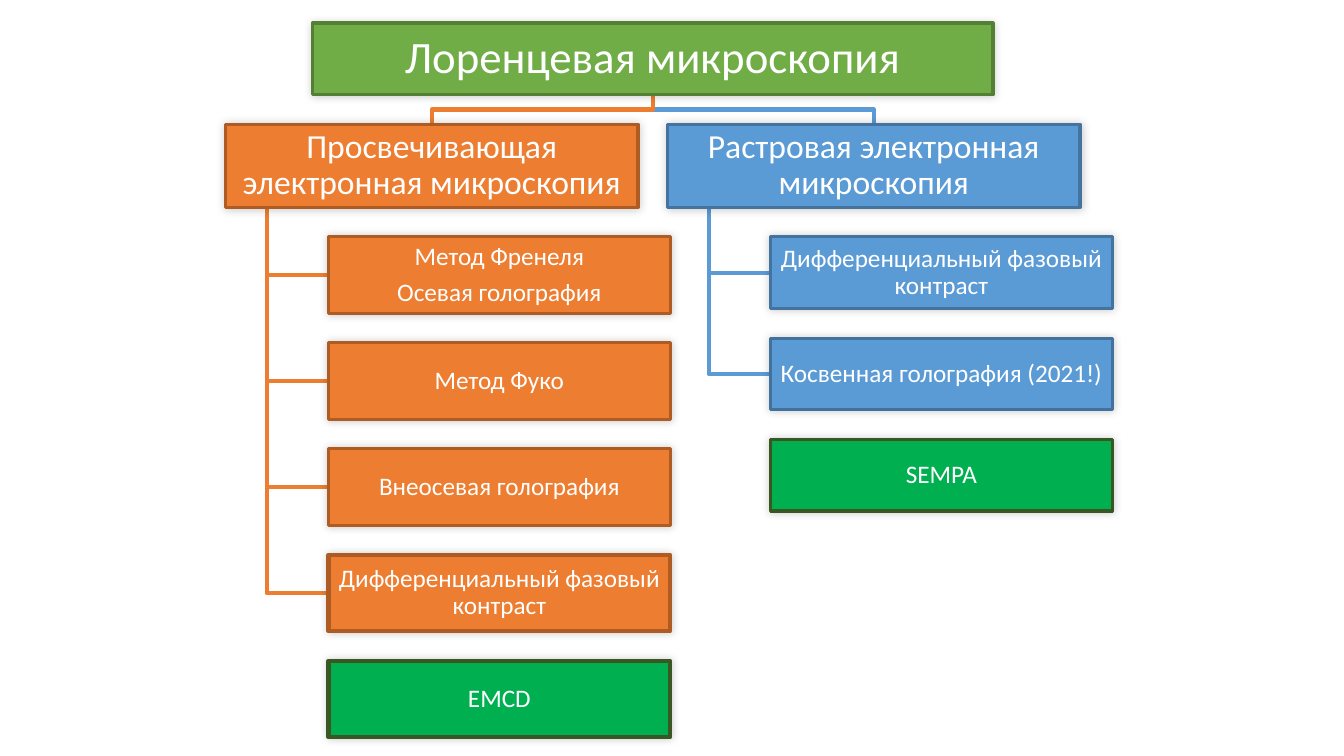
from lxml import etree
from pptx import Presentation, util as u
from pptx.dml.color import RGBColor
from pptx.enum import shapes, text
from pptx.oxml.ns import qn

COLORS = {
    "white": "FFFFFF", "black": "000000",
    "root": "70AD47", "root_edge": "538035",
    "orange": "ED7D31", "orange_edge": "AF5C24",
    "blue": "5B9BD5", "blue_edge": "43739E", "blue_dark_edge": "41719C",
    "green": "00B050", "green_edge": "385723",
}

ROOT = "Лоренцевая микроскопия"
# fields of a method: wording, fill, edge, edge width, joined to the trunk
BRANCHES = [
    {"name": "Просвечивающая электронная микроскопия", "color": "orange", "method_height": 1.93,
     "methods": [
         ("Метод Френеля\nОсевая голография", "orange", "orange_edge", 2.25, True),
         ("Метод Фуко", "orange", "orange_edge", 2.25, True),
         ("Внеосевая голография", "orange", "orange_edge", 2.25, True),
         ("Дифференциальный фазовый контраст", "orange", "orange_edge", 3, True),
         ("EMCD", "green", "green_edge", 3, False)]},
    {"name": "Растровая электронная микроскопия", "color": "blue", "method_height": 1.81,
     "methods": [
         ("Дифференциальный фазовый контраст", "blue", "blue_edge", 2.25, True),
         ("Косвенная голография (2021!)", "blue", "blue_dark_edge", 2.25, True),
         ("SEMPA", "green", "green_edge", 2.25, False)]},
]

GAP = 0.74
LEFT, TOP = 5.68, 0.58
ROOT_W, ROOT_H = 17.15, 1.81
BRANCH_W, BRANCH_H = 10.4, 2.1
METHOD_W = 8.61
METHOD_INDENT, TRUNK_INDENT = BRANCH_W / 4, BRANCH_W / 10

ROOT_X = LEFT + BRANCH_W + GAP / 2
ROOT_BOTTOM = TOP + ROOT_H
BRANCH_TOP = ROOT_BOTTOM + GAP
BRANCH_BOTTOM = BRANCH_TOP + BRANCH_H


def rgb(color):
    return RGBColor.from_string(COLORS[color])


def add_line(slide, points, color):
    corners = [(u.Cm(x), u.Cm(y)) for x, y in points]
    builder = slide.shapes.build_freeform(*corners[0])
    builder.add_line_segments(corners[1:], close=False)
    line = builder.convert_to_shape()
    line.fill.background()
    line.line.color.rgb = rgb(color)
    line.line.width = u.Pt(3)
    line.shadow.inherit = False


def add_glow(box):
    box.shadow.inherit = False
    effects = box.element.spPr.find(qn("a:effectLst"))
    shadow = etree.SubElement(effects, qn("a:outerShdw"), blurRad=str(u.Pt(6)), dist="0",
                              dir="18900000", algn="bl", rotWithShape="0")
    tone = etree.SubElement(shadow, qn("a:srgbClr"), val=COLORS["black"])
    etree.SubElement(tone, qn("a:alpha"), val="20000")


def format_box(box, wording, size, fill, edge, edge_width=2.25, inset=0.05):
    box.fill.solid()
    box.fill.fore_color.rgb = rgb(fill)
    box.line.color.rgb = rgb(edge)
    box.line.width = u.Pt(edge_width)
    add_glow(box)
    frame = box.text_frame
    frame.text = wording
    frame.word_wrap = True
    frame.auto_size = text.MSO_AUTO_SIZE.NONE
    frame.vertical_anchor = text.MSO_ANCHOR.MIDDLE
    frame.margin_left = frame.margin_right = u.Cm(inset)
    frame.margin_top = frame.margin_bottom = u.Cm(inset)
    for paragraph in frame.paragraphs:
        paragraph.alignment = text.PP_ALIGN.CENTER
        paragraph.line_spacing = 0.9
        paragraph.space_before = u.Pt(0)
        paragraph.space_after = u.Pt(0.35 * size)
        for run in paragraph.runs:
            run.font.name = "Calibri"
            run.font.size = u.Pt(size)
            run.font.color.rgb = rgb("white")


def add_box(slide, left, top, width, height):
    return slide.shapes.add_shape(shapes.MSO_SHAPE.RECTANGLE,
                                  u.Cm(left), u.Cm(top), u.Cm(width), u.Cm(height))


def add_branch(slide, branch, left):
    color, height = branch["color"], branch["method_height"]
    center, fork = left + BRANCH_W / 2, ROOT_BOTTOM + GAP / 2
    trunk, method_left = left + TRUNK_INDENT, left + METHOD_INDENT
    tops = [BRANCH_BOTTOM + GAP + i * (height + GAP) for i in range(len(branch["methods"]))]

    add_line(slide, [(ROOT_X, ROOT_BOTTOM), (ROOT_X, fork), (center, fork),
                     (center, BRANCH_TOP)], color)
    for top, method in zip(tops, branch["methods"]):
        if method[-1]:
            middle = top + height / 2
            add_line(slide, [(trunk, BRANCH_BOTTOM), (trunk, middle), (method_left, middle)], color)

    heading = add_box(slide, left, BRANCH_TOP, BRANCH_W, BRANCH_H)
    format_box(heading, branch["name"], 24, color, color + "_edge")
    for top, (wording, fill, edge, edge_width, _) in zip(tops, branch["methods"]):
        method_box = add_box(slide, method_left, top, METHOD_W, height)
        format_box(method_box, wording, 18, fill, edge, edge_width, 0.03)


def main():
    deck = Presentation()
    deck.slide_width, deck.slide_height = u.Cm(33.87), u.Cm(19.05)
    slide = deck.slides.add_slide(deck.slide_layouts[5])

    for i, branch in reversed(list(enumerate(BRANCHES))):
        add_branch(slide, branch, LEFT + i * (BRANCH_W + GAP))

    root = slide.shapes.title
    root.left, root.top = u.Cm(ROOT_X - ROOT_W / 2), u.Cm(TOP)
    root.width, root.height = u.Cm(ROOT_W), u.Cm(ROOT_H)
    format_box(root, ROOT, 32, "root", "root_edge")
    slide.shapes.element.append(root.element)

    deck.save("out.pptx")


if __name__ == "__main__":
    main()
